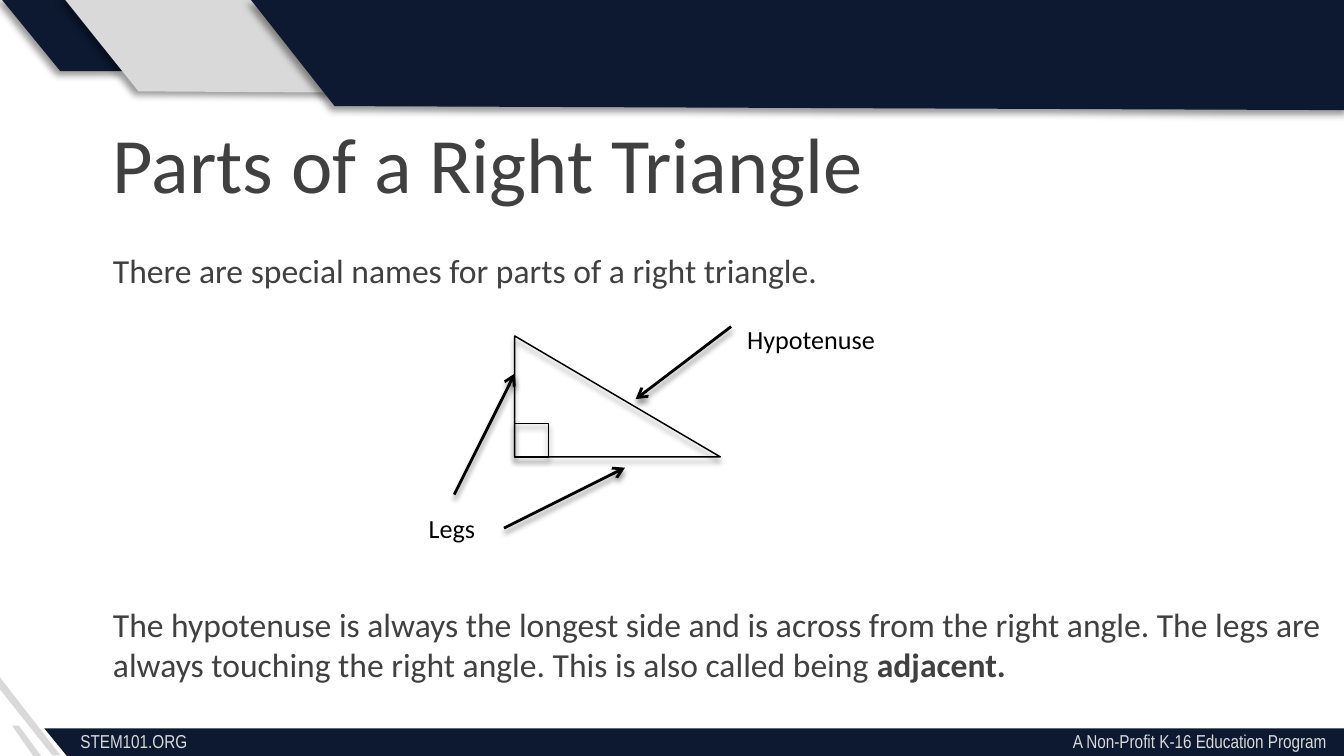
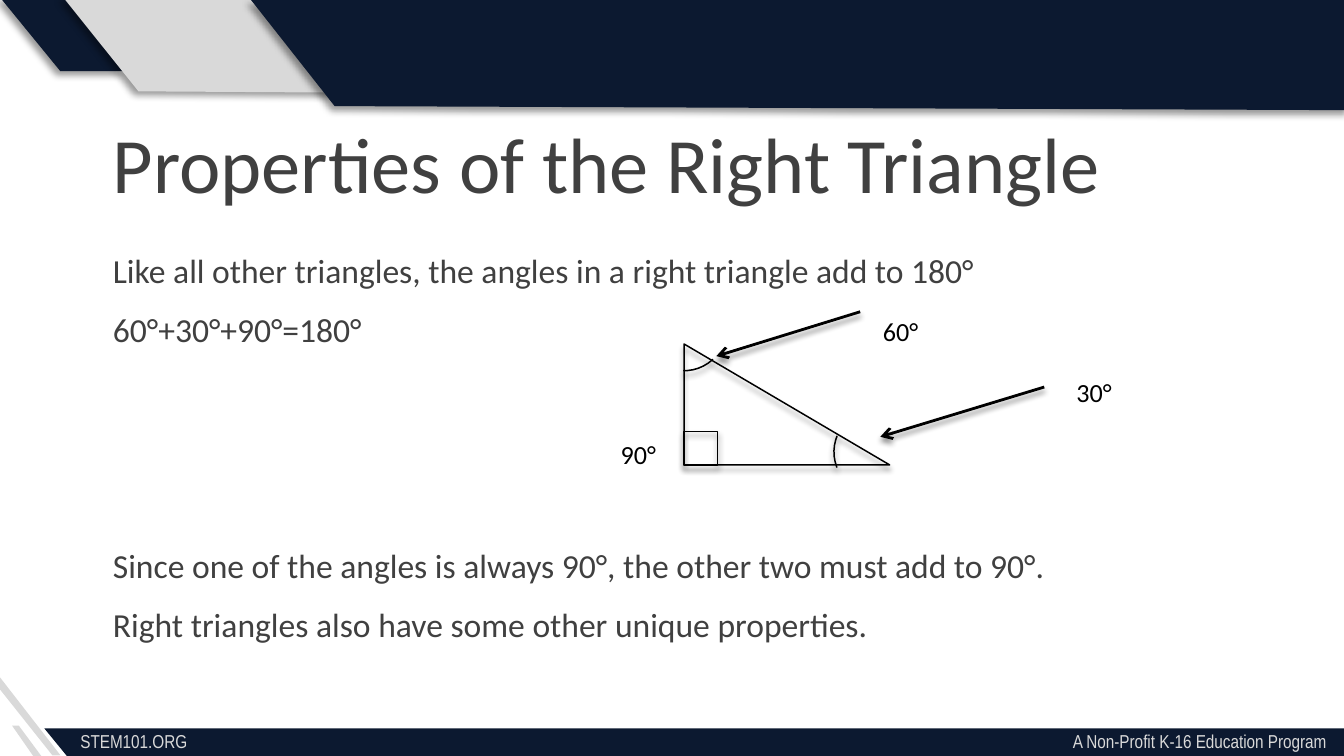
from dataclasses import dataclass

from lxml.etree import SubElement
from pptx import Presentation
from pptx.dml.color import RGBColor
from pptx.enum.shapes import MSO_CONNECTOR as Connector, MSO_SHAPE as Preset
from pptx.enum.text import MSO_ANCHOR as Anchor, MSO_AUTO_SIZE as AutoSize, PP_ALIGN as Align
from pptx.oxml.ns import qn
from pptx.util import Inches, Pt


@dataclass(frozen=True)
class Theme:
    navy: str = "0C1930"
    silver: str = "D9D9D9"
    text: str = "404040"
    ink: str = "000000"
    font: str = "Calibri"
    footer_font: str = "Arial Narrow"
    title_size: float = 42
    body_size: float = 18
    label_size: float = 14
    footer_size: float = 10
    outline: float = 0.79
    arrow: float = 1.5
    paragraph_gap: float = 10
    line_pitch: float = 31.6
    # Shadows: opacity %, blur pt, distance pt, direction in degrees
    band_shadow: tuple = (40, 4, 3, 135)
    figure_shadow: tuple = (45, 3, 2.4, 90)


THEME = Theme()
SLIDE_WIDTH = 10
SLIDE_HEIGHT = SLIDE_WIDTH * 9 / 16

# Outlines in slide inches: fill, shadow, corner points
BANDS = [
    (THEME.navy, True, [(0.45, 0.53), (0, -0.02), (0.48, -0.02), (0.93, 0.53)]),
    (THEME.silver, True, [(1.03, 0.68), (0.47, -0.02), (2.04, -0.02), (2.59, 0.69)]),
    (THEME.silver, False, [(0.31, 5.63), (0.25, 5.63), (0.09, 5.4), (0.14, 5.4)]),
    (THEME.silver, False, [(0.45, 5.62), (0.39, 5.62), (0, 5.13), (0, 5.04)]),
    (THEME.navy, True, [(2.49, 0.79), (1.86, -0.01), (10.02, -0.01), (10.04, 0.82)]),
    (THEME.navy, False, [(10.06, 5.65), (0.51, 5.64), (0.33, 5.42), (10.07, 5.42)]),
]


# Shared helpers
def apply_format(target, values):
    for name, value in values.items():
        setattr(target, name, value)


def inches(*lengths):
    return [Inches(length) for length in lengths]


def format_font(font, name, size, color):
    apply_format(font, {"name": name, "size": Pt(size)})
    font.color.rgb = RGBColor.from_string(color)


def add_shadow(shape, shadow):
    opacity, blur, distance, direction = shadow
    properties = shape._element.spPr
    effects = properties.find(qn("a:effectLst"))
    if effects is None:
        effects = SubElement(properties, qn("a:effectLst"))
    outer = SubElement(effects, qn("a:outerShdw"), blurRad=str(Pt(blur)), dist=str(Pt(distance)),
                       dir=str(direction * 60000), rotWithShape="0")
    color = SubElement(outer, qn("a:srgbClr"), val=THEME.ink)
    SubElement(color, qn("a:alpha"), val=str(opacity * 1000))


def add_label(slide, text, box):
    frame = slide.shapes.add_textbox(*inches(*box)).text_frame
    frame.word_wrap = True
    frame.text = text
    format_font(frame.paragraphs[0].font, THEME.font, THEME.label_size, THEME.ink)


def add_arrow(slide, start, end):
    arrow = slide.shapes.add_connector(Connector.STRAIGHT, *inches(*start, *end))
    arrow.line.color.rgb = RGBColor.from_string(THEME.ink)
    arrow.line.width = Pt(THEME.arrow)
    SubElement(arrow.line._get_or_add_ln(), qn("a:tailEnd"), type="arrow")
    add_shadow(arrow, THEME.figure_shadow)


# Template: bands and footer sit on the layout, behind its placeholders
def add_band(slide, fill, shadowed, points):
    start, *corners = [inches(*point) for point in points]
    builder = slide.shapes.build_freeform(*start)
    builder.add_line_segments(corners, close=True)
    band = builder.convert_to_shape()
    band.shadow.inherit = False
    band.fill.solid()
    band.fill.fore_color.rgb = RGBColor.from_string(fill)
    band.line.fill.background()
    if shadowed:
        add_shadow(band, THEME.band_shadow)
    return band


def add_footer(slide, box):
    footer = slide.shapes.add_textbox(*inches(*box))
    footer.text_frame.word_wrap = True
    paragraph = footer.text_frame.paragraphs[0]
    tabs = SubElement(paragraph._p.get_or_add_pPr(), qn("a:tabLst"))
    SubElement(tabs, qn("a:tab"), pos=str(Inches(box[2] - 0.23)), algn="r")
    paragraph.add_run().text = "STEM101.ORG\tA Non-Profit K-16 Education Program"
    format_font(paragraph.runs[0].font, THEME.footer_font, THEME.footer_size, THEME.silver)
    return footer


def decorate_layout(slide):
    parts = [add_band(slide, *band) for band in BANDS]
    parts.append(add_footer(slide, (0.5, 5.38, 9.5, 0.27)))
    tree = slide.slide_layout.shapes._spTree
    for index, part in enumerate(parts):
        part._element.nvSpPr.cNvPr.id = 100 + index
        tree.insert(2 + index, part._element)


# Title and body placeholders
def place_text(shape, box):
    apply_format(shape, dict(zip(("left", "top", "width", "height"), inches(*box))))
    apply_format(shape.text_frame, {"word_wrap": True, "auto_size": AutoSize.NONE,
                                    "vertical_anchor": Anchor.TOP})
    return shape.text_frame


def fill_title(slide, text, box):
    frame = place_text(slide.shapes.title, box)
    frame.text = text
    paragraph = frame.paragraphs[0]
    paragraph.alignment = Align.LEFT
    format_font(paragraph.font, THEME.font, THEME.title_size, THEME.text)


def fill_body(slide, items, box):
    """Each item is (lines left free above, text, bold ending)."""
    frame = place_text(slide.placeholders[1], box)
    for index, (free_lines, text, ending) in enumerate(items):
        paragraph = frame.add_paragraph() if index else frame.paragraphs[0]
        properties = paragraph._p.get_or_add_pPr()
        apply_format(paragraph, {
            "space_before": Pt(THEME.paragraph_gap + free_lines * THEME.line_pitch if index else 0),
            "alignment": Align.LEFT})
        properties.set("marL", "0")
        properties.set("indent", "0")
        SubElement(properties, qn("a:buNone"))
        format_font(paragraph.font, THEME.font, THEME.body_size, THEME.text)
        paragraph.add_run().text = text
        if ending:
            run = paragraph.add_run()
            run.text = ending
            run.font.bold = True


# Right triangle with its square corner and optional angle arcs
def add_outline(group, preset, box):
    shape = group.shapes.add_shape(preset, *inches(*box))
    shape.shadow.inherit = False
    shape.fill.background()
    shape.line.color.rgb = RGBColor.from_string(THEME.ink)
    shape.line.width = Pt(THEME.outline)
    add_shadow(shape, THEME.figure_shadow)
    return shape


def add_triangle(slide, left, top, arcs=()):
    width, height, corner = 1.53, 0.9, 0.25
    group = slide.shapes.add_group_shape()
    for offset_x, offset_y, rotation in arcs:
        arc = add_outline(group, Preset.BLOCK_ARC, (left + offset_x, top + offset_y, 0.63, 0.64))
        arc.rotation = rotation
        for index, value in enumerate((157.38, 182.64, 0)):
            arc.adjustments[index] = value
    add_outline(group, Preset.RIGHT_TRIANGLE, (left, top, width, height))
    add_outline(group, Preset.RECTANGLE, (left, top + height - corner, corner, corner))


# Slides
def add_lesson_slide(presentation, title, items, body_height):
    slide = presentation.slides.add_slide(presentation.slide_layouts[1])
    fill_title(slide, title, (0.74, 0.81, 9.4, 1.44))
    fill_body(slide, items, (0.74, 1.81, 9.4, body_height))
    return slide


def add_parts_slide(presentation):
    slide = add_lesson_slide(presentation, "Parts of a Right Triangle", [
        (0, "There are special names for parts of a right triangle.", ""),
        (5, "The hypotenuse is always the longest side and is across from the right angle. "
            "The legs are always touching the right angle. This is also called being ", "adjacent."),
    ], 4.24)
    left, top = 3.83, 2.5
    add_triangle(slide, left, top)
    for start_x, start_y, end_x, end_y in [(1.61, -0.07, 0.9, 0.47), (-0.08, 1.43, 0.82, 0.98),
                                           (-0.45, 1.18, 0, 0.28)]:
        add_arrow(slide, (left + start_x, top + start_y), (left + end_x, top + end_y))
    add_label(slide, "Hypotenuse", (left + 1.63, top - 0.14, 1.61, 0.34))
    add_label(slide, "Legs", (left - 0.74, top + 1.26, 0.59, 0.34))
    return slide


def add_properties_slide(presentation):
    slide = add_lesson_slide(presentation, "Properties of the Right Triangle", [
        (0, "Like all other triangles, the angles in a right triangle add to 180°", ""),
        (0, "60°+30°+90°=180°", ""),
        (3, "Since one of the angles is always 90°, the other two must add to 90°.", ""),
        (0, "Right triangles also have some other unique properties.", ""),
    ], 3.55)
    left, top = 5.09, 2.56
    add_triangle(slide, left, top, arcs=[(1.12, 0.48, 256.6), (-0.32, -0.44, 145.1)])
    for start_x, start_y, end_x, end_y in [(2.68, 0.32, 1.46, 0.69), (1.31, -0.24, 0.24, 0.09)]:
        add_arrow(slide, (left + start_x, top + start_y), (left + end_x, top + end_y))
    for text, offset_x, offset_y in [("60°", 1.38, -0.26), ("30°", 2.82, 0.19), ("90°", -0.57, 0.65)]:
        add_label(slide, text, (left + offset_x, top + offset_y, 0.47, 0.34))


def main():
    presentation = Presentation()
    apply_format(presentation, {"slide_width": Inches(SLIDE_WIDTH),
                                "slide_height": Inches(SLIDE_HEIGHT)})
    decorate_layout(add_parts_slide(presentation))
    add_properties_slide(presentation)
    presentation.save("out.pptx")


if __name__ == "__main__":
    main()
